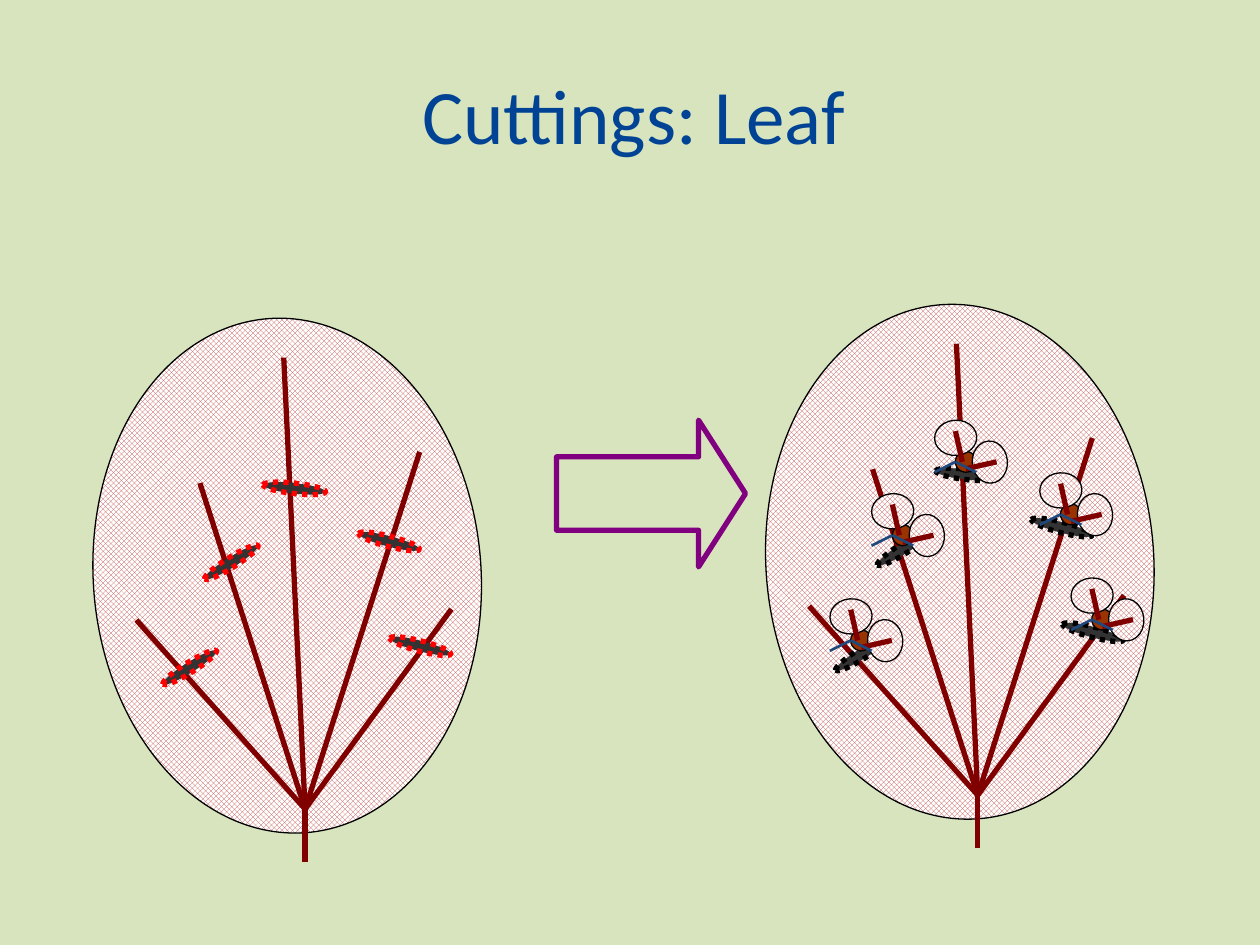
import pptx
import pptx.util
import pptx.dml.color
import pptx.enum.dml
import pptx.enum.shapes
import pptx.enum.text
import pptx.oxml.ns
import lxml.etree

Cm = pptx.util.Cm
Pt = pptx.util.Pt
RGBColor = pptx.dml.color.RGBColor
MSO_SHAPE = pptx.enum.shapes.MSO_SHAPE

BACKGROUND = RGBColor(0xD7, 0xE4, 0xBD)
TITLE_BLUE = RGBColor(0x00, 0x43, 0x95)
BLACK = RGBColor(0x00, 0x00, 0x00)
WHITE = RGBColor(0xFF, 0xFF, 0xFF)
LEAF_RED = RGBColor(0xC0, 0x50, 0x4D)
VEIN = RGBColor(0x80, 0x00, 0x00)
CUT_FILL = RGBColor(0x33, 0x33, 0x33)
CUT_RED = RGBColor(0xFF, 0x00, 0x00)
BUD_BROWN = RGBColor(0x99, 0x33, 0x00)
ROOT_BLUE = RGBColor(0x1F, 0x49, 0x7D)
PURPLE = RGBColor(0x80, 0x00, 0x80)

TITLE = "Cuttings: Leaf"

LEAVES = [((6.15, 16.31), CUT_RED), ((19.71, 16.03), BLACK)]
BLADE = (-4.27, -9.9, 7.82, 10.39)
VEIN_TIPS = [(-0.43, -9.1), (2.31, -7.2), (-2.12, -6.57), (-3.4, -3.81), (2.95, -4.03)]
STEM = ((0, 1.06), (0, -0.21))
CUT_SIZE = (1.27, 0.21)
CUTS = [
    (1.06, -5.5, 14.6),
    (1.69, -3.39, 14.6),
    (-2.12, -5.08, 328),
    (-2.96, -2.96, 328),
    (-0.85, -6.57, 6.3),
]

PLANTLETS = [(17.15, 12.7), (21.38, 10.16), (22.01, 12.28), (19.26, 9.1), (17.99, 10.58)]
BUD = (0, 0, 0.42, 0.42)
SPROUTS = [
    ((0.34, -0.21, 0.71, 0.85), 356, ((0.21, 0.35), (0.83, 0.21))),
    ((-0.35, -0.7, 0.71, 0.85), 266, ((0.14, 0.21), (0, -0.41))),
]
ROOTS = [((0, 0.21), (0.42, 0.42)), ((-0.42, 0.42), (0, 0.21))]

ARROW = (11.22, 8.47, 3.81, 2.96)


def add_text(slide, text, box, *, size, color, font):
    frame = slide.shapes.add_textbox(*map(Cm, box)).text_frame
    frame.word_wrap = True
    frame.vertical_anchor = pptx.enum.text.MSO_ANCHOR.MIDDLE
    paragraph = frame.paragraphs[0]
    paragraph.alignment = pptx.enum.text.PP_ALIGN.CENTER
    properties = paragraph._p.get_or_add_pPr()
    properties.set("marL", str(Cm(0.15)))
    properties.set("indent", "0")
    run = paragraph.add_run()
    run.text = text
    run.font.size = Pt(size)
    run.font.name = font
    run.font.color.rgb = color


def add_outlined(parent, kind, origin, box, *, line, width, rotation=0):
    left, top, box_width, box_height = box
    shape = parent.shapes.add_shape(
        kind, Cm(origin[0] + left), Cm(origin[1] + top), Cm(box_width), Cm(box_height)
    )
    shape.shadow.inherit = False
    shape.rotation = rotation
    shape.line.color.rgb = line
    shape.line.width = Pt(width)
    return shape


def add_oval(parent, origin, box, *, fill, line=BLACK, width=0.75, rotation=0):
    oval = add_outlined(
        parent, MSO_SHAPE.OVAL, origin, box, line=line, width=width, rotation=rotation
    )
    oval.fill.solid()
    oval.fill.fore_color.rgb = fill
    return oval


def add_blade(parent, origin, box, rotation):
    blade = add_outlined(
        parent, MSO_SHAPE.OVAL, origin, box, line=BLACK, width=0.75, rotation=rotation
    )
    blade.fill.patterned()
    blade.fill.pattern = pptx.enum.dml.MSO_PATTERN.TRELLIS
    blade.fill.fore_color.rgb = LEAF_RED
    blade.fill.back_color.rgb = WHITE


def add_line(parent, origin, start, end, *, color=VEIN, width=3):
    points = [Cm(base + offset) for point in (start, end) for base, offset in zip(origin, point)]
    line = parent.shapes.add_connector(pptx.enum.shapes.MSO_CONNECTOR.STRAIGHT, *points)
    line.line.color.rgb = color
    line.line.width = Pt(width)
    lxml.etree.SubElement(line._element.spPr, pptx.oxml.ns.qn("a:effectLst"))


def add_leaf(slide, base, cut_line):
    leaf = slide.shapes.add_group_shape()
    add_blade(leaf, base, BLADE, 356)
    for tip in VEIN_TIPS:
        add_line(leaf, base, (0, 0), tip)
    add_line(leaf, base, *STEM)
    for left, top, rotation in CUTS:
        cut = add_oval(
            leaf, base, (left, top, *CUT_SIZE),
            fill=CUT_FILL, line=cut_line, width=3, rotation=rotation,
        )
        cut.line.dash_style = pptx.enum.dml.MSO_LINE.ROUND_DOT


def add_plantlet(slide, corner):
    plantlet = slide.shapes.add_group_shape()
    add_oval(plantlet, corner, BUD, fill=BUD_BROWN)
    for box, rotation, stalk in SPROUTS:
        add_blade(plantlet, corner, box, rotation)
        add_line(plantlet, corner, *stalk)
    for root in ROOTS:
        add_line(plantlet, corner, *root, color=ROOT_BLUE, width=1.5)


def main():
    presentation = pptx.Presentation()
    presentation.slide_width = Cm(25.4)
    presentation.slide_height = Cm(19.05)
    slide = presentation.slides.add_slide(presentation.slide_layouts[6])
    slide.background.fill.solid()
    slide.background.fill.fore_color.rgb = BACKGROUND

    add_text(slide, TITLE, (1.27, 0.71, 22.86, 3.18), size=44, color=TITLE_BLUE, font="Calibri")
    for base, cut_line in LEAVES:
        add_leaf(slide, base, cut_line)
    for corner in PLANTLETS:
        add_plantlet(slide, corner)
    arrow = add_outlined(slide, MSO_SHAPE.RIGHT_ARROW, (0, 0), ARROW, line=PURPLE, width=3)
    arrow.fill.background()
    arrow.adjustments[0] = 0.5
    arrow.adjustments[1] = 0.32

    presentation.save("out.pptx")


if __name__ == "__main__":
    main()
